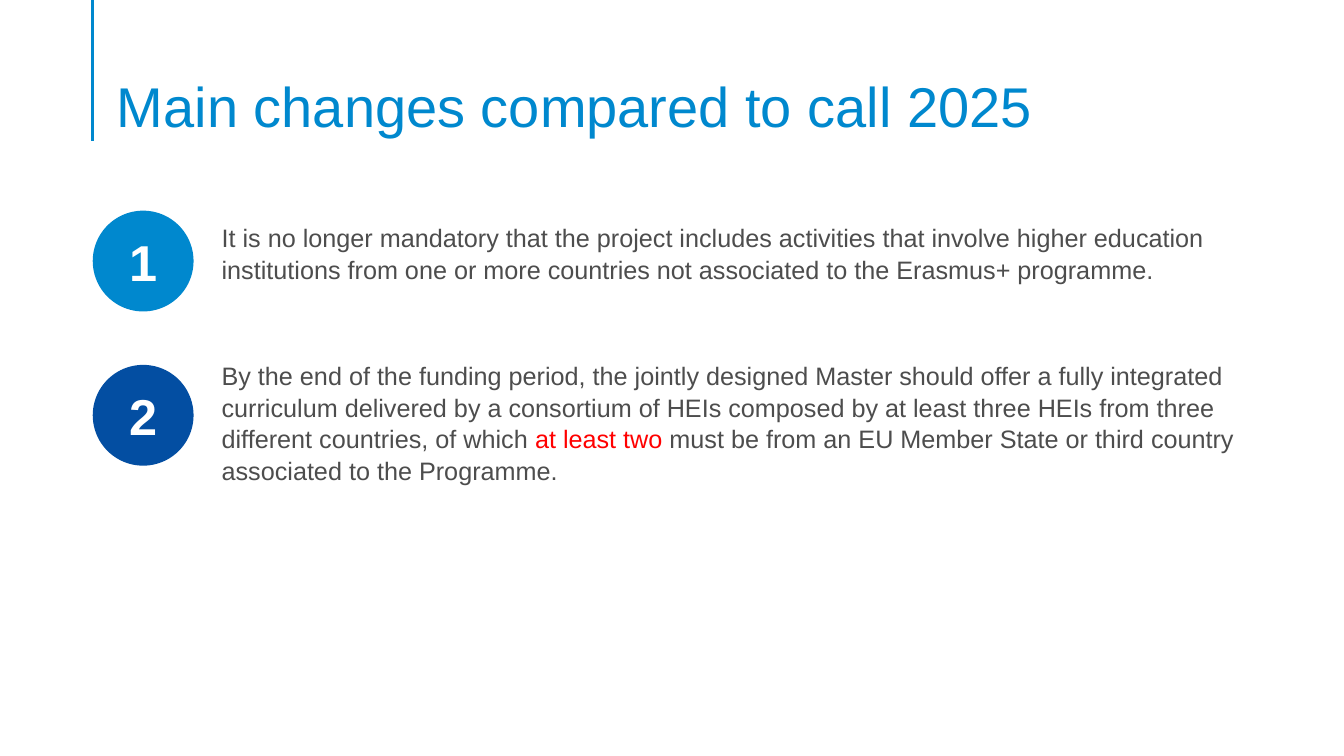
"""Build the slide listing the main changes compared to call 2025."""
from lxml import etree
from pptx import Presentation
from pptx.dml.color import RGBColor
from pptx.enum.shapes import MSO_CONNECTOR, MSO_SHAPE
from pptx.enum.text import MSO_ANCHOR, MSO_AUTO_SIZE, PP_ALIGN
from pptx.oxml.ns import qn
from pptx.util import Inches, Pt

COLORS = {
    "blue": "0088CE",
    "navy": "034EA2",
    "gray": "4D4D4D",
    "red": "FF0000",
    "white": "FFFFFF",
}


def rgb(name):
    return RGBColor.from_string(COLORS[name])


def set_font(r, size, color, bold=False):
    r.font.name = "Arial"
    r.font.size = Pt(size)
    r.font.bold = bold
    r.font.color.rgb = rgb(color)


prs = Presentation()
prs.slide_width = Inches(13.33)
prs.slide_height = Inches(7.5)
s = prs.slides.add_slide(prs.slide_layouts[5])

line = s.shapes.add_connector(
    MSO_CONNECTOR.STRAIGHT, Inches(0.92), Inches(0), Inches(0.92), Inches(1.4)
)
line.line.color.rgb = rgb("blue")
line.line.width = Pt(2.25)
etree.SubElement(line._element.spPr, qn("a:effectLst"))

title = s.shapes.title
title.left, title.top = Inches(1.06), Inches(0.53)
title.width, title.height = Inches(11.5), Inches(0.86)
tf = title.text_frame
tf.text = "Main changes compared to call 2025"
tf.auto_size = MSO_AUTO_SIZE.NONE
tf.vertical_anchor = MSO_ANCHOR.BOTTOM
tf.margin_bottom = 0
p = tf.paragraphs[0]
p.alignment = PP_ALIGN.LEFT
p.line_spacing = 0.9
set_font(p.runs[0], 40, "blue")

changes = [
    ("blue", 2.09, (2.14, 10.23, 0.94), [
        ("It is no longer mandatory that the project includes activities that "
         "involve higher education institutions from one or more countries not "
         "associated to the Erasmus+ programme.", "gray"),
    ]),
    ("navy", 3.62, (3.51, 10.36, 1.31), [
        ("By the end of the funding period, the jointly designed Master should "
         "offer a fully integrated curriculum delivered by a consortium of HEIs "
         "composed by at least three HEIs from three different countries, of "
         "which ", "gray"),
        ("at least two ", "red"),
        ("must be from an EU Member State or third country associated to the "
         "Programme.", "gray"),
    ]),
]

for number, (fill, circle_top, (top, width, height), parts) in enumerate(changes, 1):
    sp = s.shapes.add_shape(
        MSO_SHAPE.OVAL, Inches(0.92), Inches(circle_top), Inches(1), Inches(1)
    )
    sp.shadow.inherit = False
    sp.fill.solid()
    sp.fill.fore_color.rgb = rgb(fill)
    sp.line.fill.background()
    tf = sp.text_frame
    tf.text = str(number)
    tf.vertical_anchor = MSO_ANCHOR.MIDDLE
    p = tf.paragraphs[0]
    p.alignment = PP_ALIGN.CENTER
    set_font(p.runs[0], 36, "white", bold=True)

    tb = s.shapes.add_textbox(Inches(2.1), Inches(top), Inches(width), Inches(height))
    tf = tb.text_frame
    tf.word_wrap = True
    p = tf.paragraphs[0]
    p.line_spacing = 1.05
    for text, color in parts:
        r = p.add_run()
        r.text = text
        set_font(r, 18, color)

prs.save("out.pptx")
